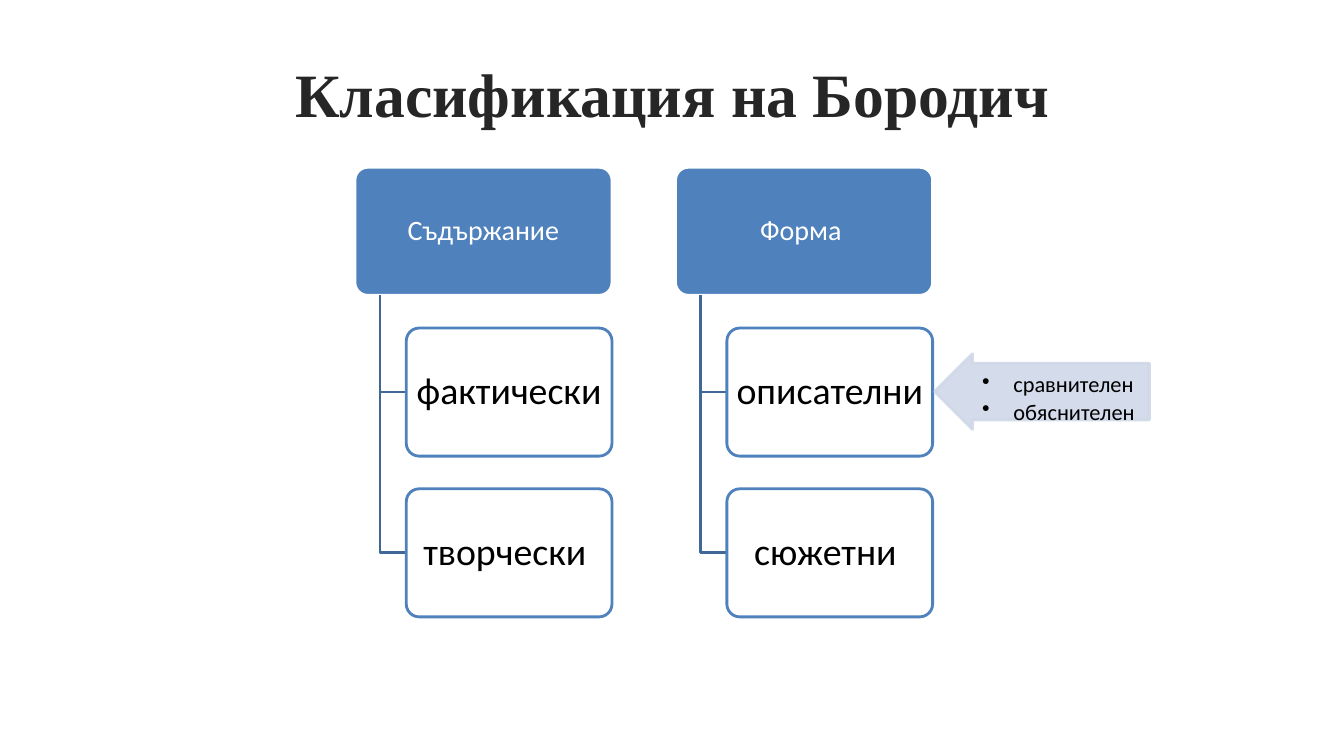
from dataclasses import dataclass

from lxml import etree
from pptx import Presentation
from pptx.dml.color import RGBColor
from pptx.enum.shapes import MSO_SHAPE
from pptx.enum.text import MSO_ANCHOR, PP_ALIGN
from pptx.oxml.ns import qn
from pptx.util import Inches, Pt

ROUNDED, LEFT_ARROW = MSO_SHAPE.ROUNDED_RECTANGLE, MSO_SHAPE.LEFT_ARROW
MIDDLE, TOP = MSO_ANCHOR.MIDDLE, MSO_ANCHOR.TOP
CENTER, LEFT = PP_ALIGN.CENTER, PP_ALIGN.LEFT

BLUE, DARK_BLUE, PALE_BLUE = "4F81BD", "3F6797", "D0D8E8"
WHITE, BLACK, CHARCOAL = "FFFFFF", "000000", "262626"

HEAD_TOP, BOX_HEIGHT, ROW_STEP = 1.66, 1.27, 1.595
HEAD_WIDTH, KIND_WIDTH = 2.55, 2.04
KIND_INDENT, STEM_INDENT = 0.51, 0.25


@dataclass
class Criterion:
    heading: str
    left: float
    kinds: list[str]


CRITERIA = [
    Criterion("Съдържание", 3.52, ["фактически", "творчески "]),
    Criterion("Форма ", 6.7, ["описателни ", "сюжетни "]),
]
DESCRIPTIVE_KINDS = ["сравнителен", "обяснителен"]


def rgb(color: str) -> RGBColor:
    return RGBColor.from_string(color)


def style(shape, fill: str, line: str) -> None:
    shape.shadow.inherit = False
    shape.fill.solid()
    shape.fill.fore_color.rgb = rgb(fill)
    shape.line.color.rgb = rgb(line)
    shape.line.width = Pt(2)


def set_insets(frame, left: float, top: float, right: float, bottom: float) -> None:
    frame.margin_left, frame.margin_top = Inches(left), Inches(top)
    frame.margin_right, frame.margin_bottom = Inches(right), Inches(bottom)


def set_font(paragraph, size: int, color: str, name: str = "Calibri") -> None:
    paragraph.font.size = Pt(size)
    paragraph.font.name = name
    paragraph.font.color.rgb = rgb(color)


def add_box(slide, text: str, left: float, top: float, width: float,
            fill: str, line: str, size: int, color: str) -> None:
    box = slide.shapes.add_shape(ROUNDED, Inches(left), Inches(top),
                                 Inches(width), Inches(BOX_HEIGHT))
    box.adjustments[0] = 0.1
    style(box, fill, line)
    frame = box.text_frame
    frame.word_wrap = True
    frame.vertical_anchor = MIDDLE
    set_insets(frame, 0.04, 0.04, 0.04, 0.04)
    label = frame.paragraphs[0]
    label.text = text
    label.alignment = CENTER
    label.line_spacing = 0.9
    set_font(label, size, color)


def add_elbow(slide, left: float, top: float, right: float, bottom: float) -> None:
    """Draw a line going down, then right."""
    x, y, end_x, end_y = (Inches(v) for v in (left, top, right, bottom))
    builder = slide.shapes.build_freeform(x, y)
    builder.add_line_segments([(x, end_y), (end_x, end_y)], close=False)
    elbow = builder.convert_to_shape()
    elbow.shadow.inherit = False
    elbow.fill.background()
    elbow.line.color.rgb = rgb(DARK_BLUE)
    elbow.line.width = Pt(2)


def add_criterion(slide, criterion: Criterion) -> None:
    add_box(slide, criterion.heading, criterion.left, HEAD_TOP, HEAD_WIDTH,
            BLUE, WHITE, 20, WHITE)
    kind_left = criterion.left + KIND_INDENT
    for row, kind in enumerate(criterion.kinds, start=1):
        top = HEAD_TOP + row * ROW_STEP
        add_elbow(slide, criterion.left + STEM_INDENT, HEAD_TOP + BOX_HEIGHT,
                  kind_left, top + BOX_HEIGHT / 2)
        add_box(slide, kind, kind_left, top, KIND_WIDTH, WHITE, BLUE, 27, BLACK)


def add_bullet(paragraph) -> None:
    properties = paragraph._p.get_or_add_pPr()
    properties.set("marL", str(Inches(0.31)))
    properties.set("indent", str(-Inches(0.31)))
    etree.SubElement(properties, qn("a:buChar"), char="•")


def add_arrow(slide, items: list[str]) -> None:
    arrow = slide.shapes.add_shape(LEFT_ARROW, Inches(9.27), Inches(3.51),
                                   Inches(2.13), Inches(0.75))
    arrow.adjustments[0], arrow.adjustments[1] = 0.75, 0.5
    style(arrow, PALE_BLUE, PALE_BLUE)
    for color in arrow._element.spPr.iter(qn("a:srgbClr")):
        etree.SubElement(color, qn("a:alpha"), val="90000")
    frame = arrow.text_frame
    frame.word_wrap = True
    frame.vertical_anchor = TOP
    set_insets(frame, 0.19, 0.1, 0.06, 0)
    for index, item in enumerate(items):
        paragraph = frame.add_paragraph() if index else frame.paragraphs[0]
        paragraph.text = item
        paragraph.alignment = LEFT
        paragraph.line_spacing = 0.9
        paragraph.space_after = Pt(2.4)
        add_bullet(paragraph)
        set_font(paragraph, 16, BLACK)


def add_title(slide, text: str) -> None:
    title = slide.shapes.title
    title.left, title.top = Inches(0.67), Inches(0.3)
    title.width, title.height = Inches(12), Inches(1.25)
    title.text_frame.text = text
    title.text_frame.vertical_anchor = MIDDLE
    heading = title.text_frame.paragraphs[0]
    heading.alignment = CENTER
    set_font(heading, 44, CHARCOAL, "Times New Roman")
    heading.font.bold = True


def main() -> None:
    deck = Presentation()
    deck.slide_width, deck.slide_height = Inches(13.33), Inches(7.5)
    slide = deck.slides.add_slide(deck.slide_layouts[5])
    add_title(slide, "Класификация на Бородич")
    for criterion in CRITERIA:
        add_criterion(slide, criterion)
    add_arrow(slide, DESCRIPTIVE_KINDS)
    deck.save("out.pptx")


if __name__ == "__main__":
    main()
